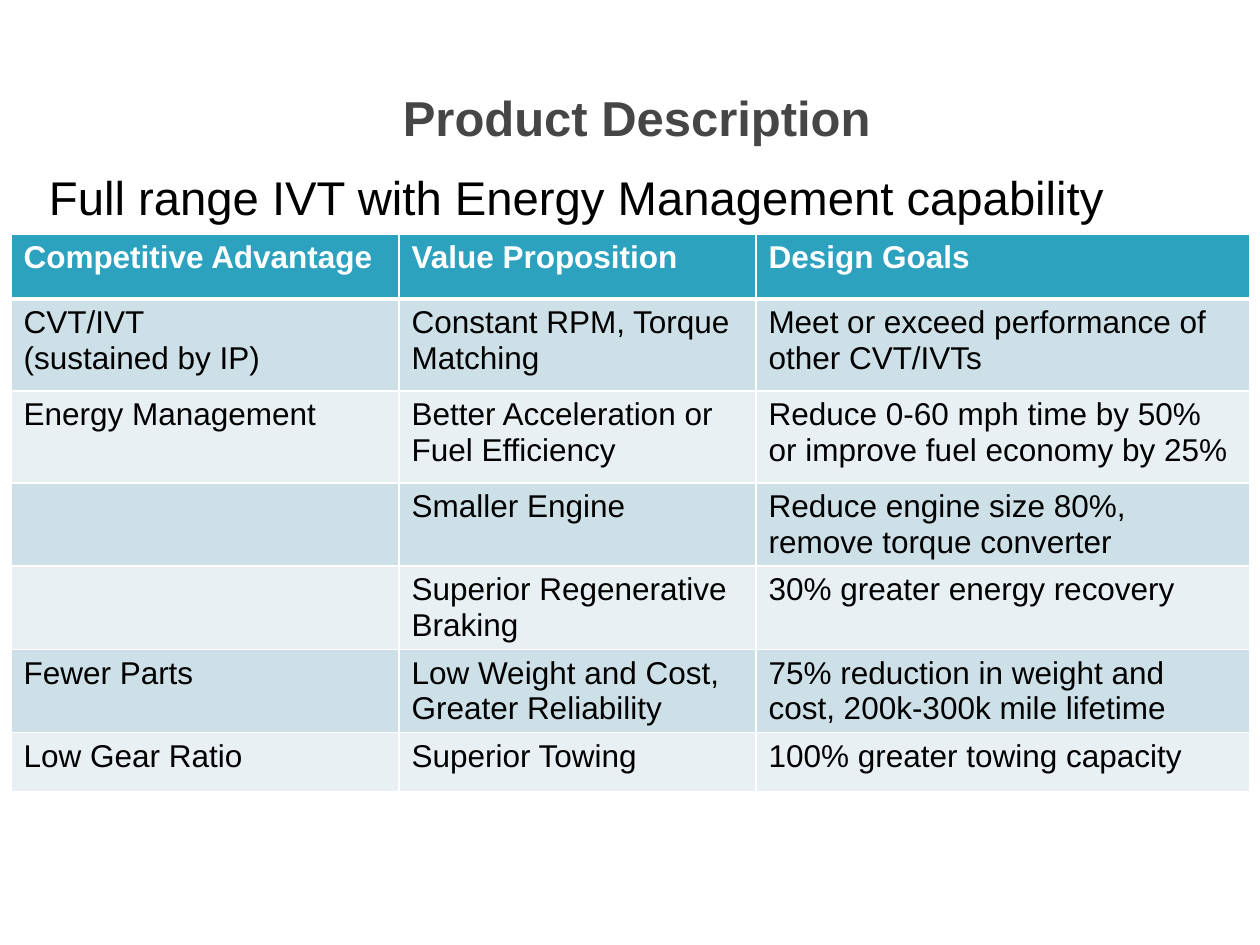
from dataclasses import dataclass

from lxml.etree import SubElement
from pptx import Presentation
from pptx.dml.color import RGBColor
from pptx.enum.text import MSO_ANCHOR, MSO_AUTO_SIZE, PP_ALIGN
from pptx.oxml import parse_xml
from pptx.oxml.ns import nsdecls, qn
from pptx.util import Emu, Pt

SCALE = 914400 // 126
FONT = "Arial"
WHITE = RGBColor(0xFF, 0xFF, 0xFF)
BLACK = RGBColor(0, 0, 0)
GRAY = RGBColor(0x46, 0x46, 0x46)
TEAL = RGBColor(0x2D, 0xA2, 0xBF)
BANDS = (RGBColor(0xCD, 0xE0, 0xE8), RGBColor(0xE8, 0xF0, 0xF4))


@dataclass
class Row:
    height: int
    cells: tuple[str, str, str]


WIDTHS = (388, 357, 494)
ROWS = (
    Row(65, ("Competitive Advantage", "Value Proposition", "Design Goals")),
    Row(92, ("CVT/IVT\n(sustained by IP)", "Constant RPM, Torque Matching",
             "Meet or exceed performance of other CVT/IVTs")),
    Row(92, ("Energy Management", "Better Acceleration or Fuel Efficiency",
             "Reduce 0-60 mph time by 50% or improve fuel economy by 25%")),
    Row(83, ("", "Smaller Engine",
             "Reduce engine size 80%, remove torque converter")),
    Row(83, ("", "Superior Regenerative Braking", "30% greater energy recovery")),
    Row(83, ("Fewer Parts", "Low Weight and Cost, Greater Reliability",
             "75% reduction in weight and cost, 200k-300k mile lifetime")),
    Row(59, ("Low Gear Ratio", "Superior Towing", "100% greater towing capacity")),
)


def px(n: int) -> Emu:
    return Emu(n * SCALE)


def style(para, size: int, color: RGBColor, bold: bool = False) -> None:
    font = para.font
    font.name, font.size, font.bold = FONT, Pt(size), bold
    font.color.rgb = color


def place(shape, left: int, top: int, width: int, height: int) -> None:
    shape.left, shape.top = px(left), px(top)
    shape.width, shape.height = px(width), px(height)


def edge(cell, top: int, bottom: int) -> None:
    """Draw white borders, with top and bottom widths in points."""
    props = cell._tc.get_or_add_tcPr()
    sides = (("L", 1), ("R", 1), ("T", top), ("B", bottom))
    for pos, (side, width) in enumerate(sides):
        line = parse_xml(
            f'<a:ln{side} {nsdecls("a")} w="{Pt(width)}"><a:solidFill>'
            f'<a:srgbClr val="{WHITE}"/></a:solidFill></a:ln{side}>')
        props.insert(pos, line)


def add_title(slide) -> None:
    title = slide.shapes.title
    place(title, 63, 38, 1134, 158)
    frame = title.text_frame
    frame.text = "Product Description"
    frame.auto_size = MSO_AUTO_SIZE.NONE
    frame.vertical_anchor = MSO_ANCHOR.MIDDLE
    frame.margin_left = px(26)
    para = frame.paragraphs[0]
    para.alignment = PP_ALIGN.CENTER
    style(para, 28, GRAY, True)


def add_body(slide) -> None:
    body = slide.placeholders[1]
    place(body, 21, 158, 1176, 189)
    frame = body.text_frame
    frame.text = "Full range IVT with Energy Management capability"
    frame.auto_size = MSO_AUTO_SIZE.NONE
    frame.margin_left, frame.margin_top = px(28), px(10)
    para = frame.paragraphs[0]
    props = para._p.get_or_add_pPr()
    props.set("marL", "0")
    props.set("indent", "0")
    SubElement(props, qn("a:buNone"))
    para.space_before = Pt(0)
    style(para, 27, BLACK)


def add_grid(slide) -> None:
    height = sum(row.height for row in ROWS)
    grid = slide.shapes.add_table(
        len(ROWS), len(WIDTHS), px(11), px(234), px(sum(WIDTHS)), px(height)).table
    for col, width in zip(grid.columns, WIDTHS):
        col.width = px(width)
    for i, row in enumerate(ROWS):
        grid.rows[i].height = px(row.height)
        head = i == 0
        for cell, text in zip(grid.rows[i].cells, row.cells):
            cell.text = text
            cell.fill.solid()
            cell.fill.fore_color.rgb = TEAL if head else BANDS[(i - 1) % 2]
            edge(cell, 3 if i == 1 else 1, 3 if head else 1)
            for para in cell.text_frame.paragraphs:
                style(para, 18, WHITE if head else BLACK, head)


def main() -> None:
    deck = Presentation()
    deck.slide_width, deck.slide_height = px(1260), px(945)
    slide = deck.slides.add_slide(deck.slide_layouts[1])
    add_title(slide)
    add_body(slide)
    add_grid(slide)
    deck.save("out.pptx")


if __name__ == "__main__":
    main()
